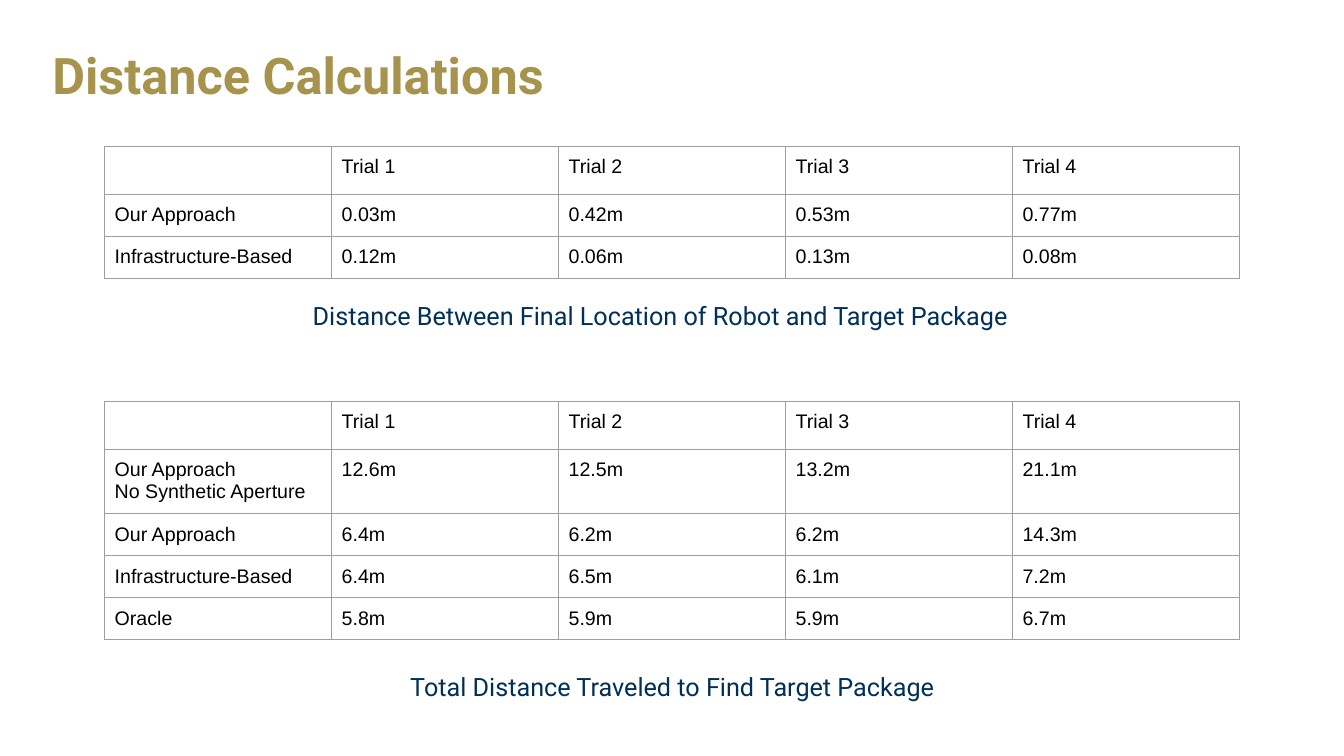
"""Build a slide with two tables of distance results and their captions."""
import lxml.etree
import pptx
import pptx.dml.color
import pptx.enum.text
import pptx.oxml.ns
import pptx.util

Cm = pptx.util.Cm
Pt = pptx.util.Pt
qn = pptx.oxml.ns.qn
COLORS = {"gold": "A7934B", "navy": "003057", "black": "000000", "grid": "9E9E9E"}
COLUMN_WIDTH = 5.72
HEADER_HEIGHT = 1.21
LINE_HEIGHT = 0.56
CELL_MARGIN = 0.25
HEADER = ["", "Trial 1", "Trial 2", "Trial 3", "Trial 4"]

tables = [
    (3.68, [
        HEADER,
        ["Our Approach", "0.03m", "0.42m", "0.53m", "0.77m"],
        ["Infrastructure-Based", "0.12m", "0.06m", "0.13m", "0.08m"],
    ]),
    (10.11, [
        HEADER,
        ["Our Approach\nNo Synthetic Aperture", "12.6m", "12.5m", "13.2m", "21.1m"],
        ["Our Approach", "6.4m", "6.2m", "6.2m", "14.3m"],
        ["Infrastructure-Based", "6.4m", "6.5m", "6.1m", "7.2m"],
        ["Oracle", "5.8m", "5.9m", "5.9m", "6.7m"],
    ]),
]
left_align = pptx.enum.text.PP_ALIGN.LEFT
center_align = pptx.enum.text.PP_ALIGN.CENTER
labels = [
    ("Distance Calculations", (1.07, 0.56, 31.75, 2.82), 36, "gold", True, left_align),
    ("Distance Between Final Location of Robot and Target Package",
     (7.59, 7.29, 18.11, 1.32), 18, "navy", False, center_align),
    ("Total Distance Traveled to Find Target Package",
     (8.84, 16.64, 16.21, 1.32), 18, "navy", False, center_align),
]


def style_text(frame, font_name, size, color, bold=False):
    """Format every run of a text frame."""
    for para in frame.paragraphs:
        for span in para.runs:
            span.font.name = font_name
            span.font.size = Pt(size)
            span.font.bold = bold
            span.font.color.rgb = pptx.dml.color.RGBColor.from_string(COLORS[color])


def add_borders(cell):
    """Draw a thin line on all four sides of a table cell."""
    properties = cell._tc.get_or_add_tcPr()
    for position, side in enumerate(("a:lnL", "a:lnR", "a:lnT", "a:lnB")):
        line = lxml.etree.Element(qn(side), w=str(Pt(0.75)))
        fill = lxml.etree.SubElement(line, qn("a:solidFill"))
        lxml.etree.SubElement(fill, qn("a:srgbClr"), val=COLORS["grid"])
        properties.insert(position, line)


deck = pptx.Presentation()
deck.slide_width = Cm(33.87)
deck.slide_height = Cm(19.05)
page = deck.slides.add_slide(deck.slide_layouts[6])

for top, rows in tables:
    heights = [HEADER_HEIGHT] + [
        2 * CELL_MARGIN + LINE_HEIGHT * (1 + row[0].count("\n")) for row in rows[1:]
    ]
    frame = page.shapes.add_table(
        len(rows), len(HEADER), Cm(2.64), Cm(top),
        Cm(COLUMN_WIDTH * len(HEADER)), Cm(sum(heights)),
    )
    table = frame.table
    table.first_row = False
    table.horz_banding = False
    for column in table.columns:
        column.width = Cm(COLUMN_WIDTH)
    for row_index, row in enumerate(rows):
        table.rows[row_index].height = Cm(heights[row_index])
        for column_index, text in enumerate(row):
            cell = table.cell(row_index, column_index)
            cell.margin_left = cell.margin_right = Cm(CELL_MARGIN)
            cell.margin_top = cell.margin_bottom = Cm(CELL_MARGIN)
            cell.fill.background()
            add_borders(cell)
            if text:
                cell.text_frame.text = text
                style_text(cell.text_frame, "Arial", 14, "black")
            else:
                para = cell.text_frame.paragraphs[0]
                lxml.etree.SubElement(para._p, qn("a:endParaRPr"), sz="1400")

for text, place, size, color, bold, alignment in labels:
    box = page.shapes.add_textbox(*[Cm(length) for length in place])
    text_frame = box.text_frame
    text_frame.word_wrap = True
    text_frame.vertical_anchor = pptx.enum.text.MSO_ANCHOR.MIDDLE
    text_frame.margin_left = text_frame.margin_right = Cm(0.25)
    text_frame.text = text
    text_frame.paragraphs[0].alignment = alignment
    if bold:
        text_frame.paragraphs[0].line_spacing = 0.9
    style_text(text_frame, "Roboto", size, color, bold)

deck.save("out.pptx")
